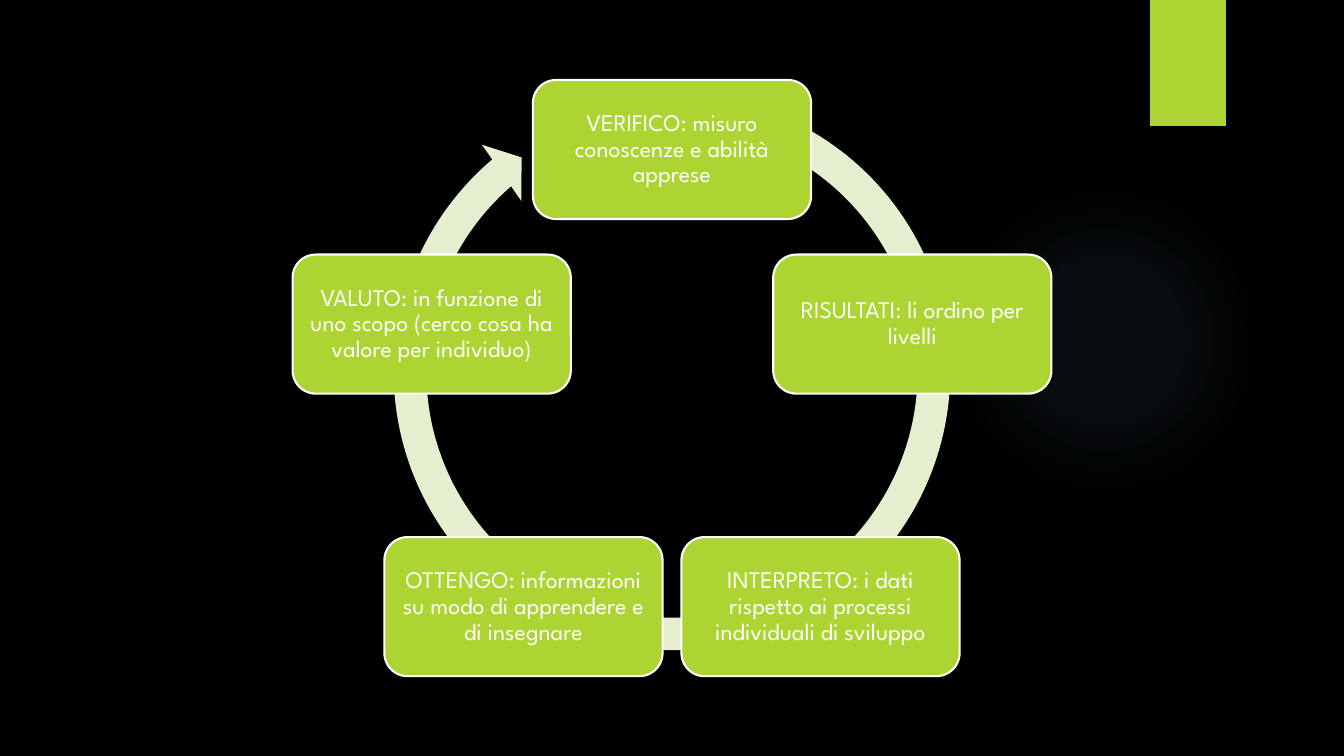
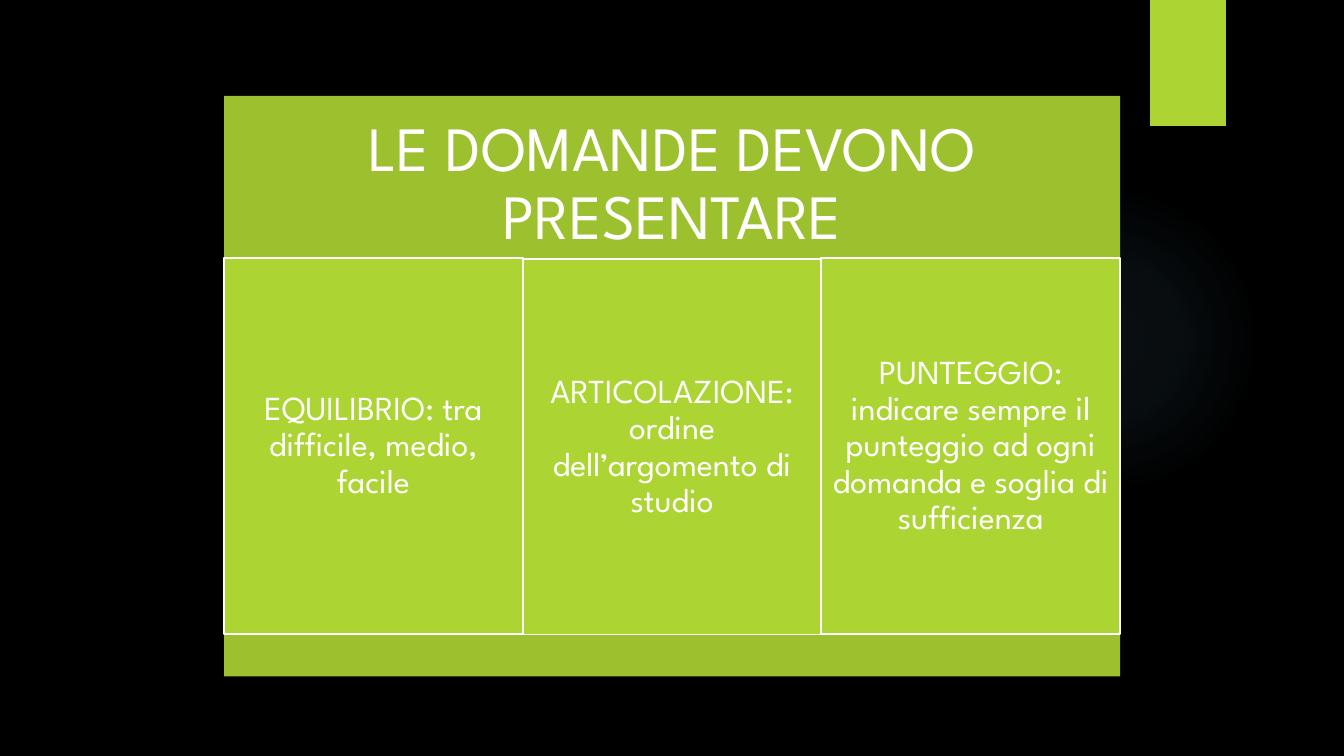
from math import cos, radians, sin

from lxml.etree import fromstring
from pptx import Presentation
from pptx.dml.color import RGBColor
from pptx.enum.shapes import MSO_SHAPE as Form
from pptx.enum.text import MSO_ANCHOR as Anchor, PP_ALIGN as Align
from pptx.oxml.ns import nsdecls, qn
from pptx.util import Inches, Pt

BLACK = RGBColor(0x00, 0x00, 0x00)
WHITE = RGBColor(0xFF, 0xFF, 0xFF)
LIME = RGBColor(0xAC, 0xD4, 0x33)
OLIVE = RGBColor(0x9C, 0xC0, 0x2E)
PALE_GREEN = RGBColor(0xE3, 0xEF, 0xCE)
SKY = RGBColor(0x7A, 0xC4, 0xF0)
FONT = "League Spartan"

CYCLE_STEPS = [
    "VERIFICO: misuro conoscenze e abilità apprese",
    "RISULTATI: li ordino per livelli",
    "INTERPRETO: i dati rispetto ai processi individuali di sviluppo",
    "OTTENGO: informazioni su modo di apprendere e di insegnare",
    "VALUTO: in funzione di uno scopo (cerco cosa ha valore per individuo)",
]
QUESTION_TITLE = "LE DOMANDE DEVONO PRESENTARE"
QUESTION_TRAITS = [
    "EQUILIBRIO: tra difficile, medio, facile",
    "ARTICOLAZIONE: ordine dell’argomento di studio",
    "PUNTEGGIO: indicare sempre il punteggio ad ogni domanda e soglia di sufficienza",
]


class Composer:
    """Places elements by percentages of the slide's width and height."""

    def __init__(self):
        self.deck = Presentation()
        self.deck.slide_width = Inches(13.33)
        self.deck.slide_height = Inches(7.5)
        self.page = None

    def new_page(self):
        self.page = self.deck.slides.add_slide(self.deck.slide_layouts[6])
        background = self.page.background.fill
        background.solid()
        background.fore_color.rgb = BLACK
        self.glow(70.58, 24.4, 23.1, 41.07)
        self.shape(Form.RECTANGLE, 85.58, 0, 5.63, 16.67, LIME)

    def shape(self, form, left, top, width, height, color=None, outlined=False):
        across = self.deck.slide_width / 100
        down = self.deck.slide_height / 100
        box = self.page.shapes.add_shape(
            form, round(left * across), round(top * down),
            round(width * across), round(height * down))
        box.shadow.inherit = False
        if color is None:
            box.fill.background()
        else:
            box.fill.solid()
            box.fill.fore_color.rgb = color
        if outlined:
            box.line.color.rgb = WHITE
            box.line.width = Pt(1.5)
        else:
            box.line.fill.background()
        return box

    def glow(self, left, top, width, height):
        box = self.shape(Form.OVAL, left, top, width, height)
        stops = "".join(
            f'<a:gs pos="{place * 1000}"><a:srgbClr val="{SKY}">'
            f'<a:alpha val="{alpha * 1000}"/></a:srgbClr></a:gs>'
            for place, alpha in [(0, 7), (36, 6), (69, 0)])
        gradient = fromstring(
            f'<a:gradFill {nsdecls("a")}><a:gsLst>{stops}</a:gsLst>'
            '<a:path path="circle"><a:fillToRect l="50000" t="50000" '
            'r="50000" b="50000"/></a:path></a:gradFill>')
        properties = box._element.spPr
        properties.replace(properties.find(qn("a:noFill")), gradient)

    def ring(self, left, top, width, height):
        box = self.shape(Form.CIRCULAR_ARROW, left, top, width, height, PALE_GREEN)
        for index, value in enumerate([0.055, 3.307, 137.676, 173.91, 0.058]):
            box.adjustments[index] = value

    def label(self, box, text, size, inset):
        frame = box.text_frame
        frame.text = text
        frame.word_wrap = True
        frame.vertical_anchor = Anchor.MIDDLE
        frame.margin_left = frame.margin_right = Inches(inset)
        frame.margin_top = frame.margin_bottom = Inches(inset)
        for para in frame.paragraphs:
            para.alignment = Align.CENTER
            para.line_spacing = 0.9
            for span in para.runs:
                span.font.name = FONT
                span.font.size = Pt(size)
                span.font.color.rgb = WHITE

    def cycle(self, steps):
        width, height = 20.7, 18.4
        self.ring(27.95, 10, 44.1, 78.4)
        for index, text in enumerate(steps):
            angle = radians(index * 360 / len(steps))
            left = 50 + 18.8 * sin(angle) - width / 2
            top = 53.2 - 33.43 * cos(angle) - height / 2
            card = self.shape(Form.ROUNDED_RECTANGLE, left, top, width, height, LIME, True)
            self.label(card, text, 17, 0.07)

    def panel(self, title, columns):
        left, width = 16.67, 66.67
        header = self.shape(Form.RECTANGLE, left, 12.67, width, 23.73, OLIVE)
        self.label(header, title, 45, 0.19)
        column_width = width / len(columns)
        for index, text in enumerate(columns):
            top = 34.27 if index % 2 else 34.13
            column = self.shape(Form.RECTANGLE, left + index * column_width, top,
                                column_width, 49.73, LIME, True)
            self.label(column, text, 24, 0.1)
        self.shape(Form.RECTANGLE, left, 84, width, 5.47, OLIVE)


def main():
    composer = Composer()
    composer.new_page()
    composer.cycle(CYCLE_STEPS)
    composer.new_page()
    composer.panel(QUESTION_TITLE, QUESTION_TRAITS)
    composer.deck.save("out.pptx")


if __name__ == "__main__":
    main()
